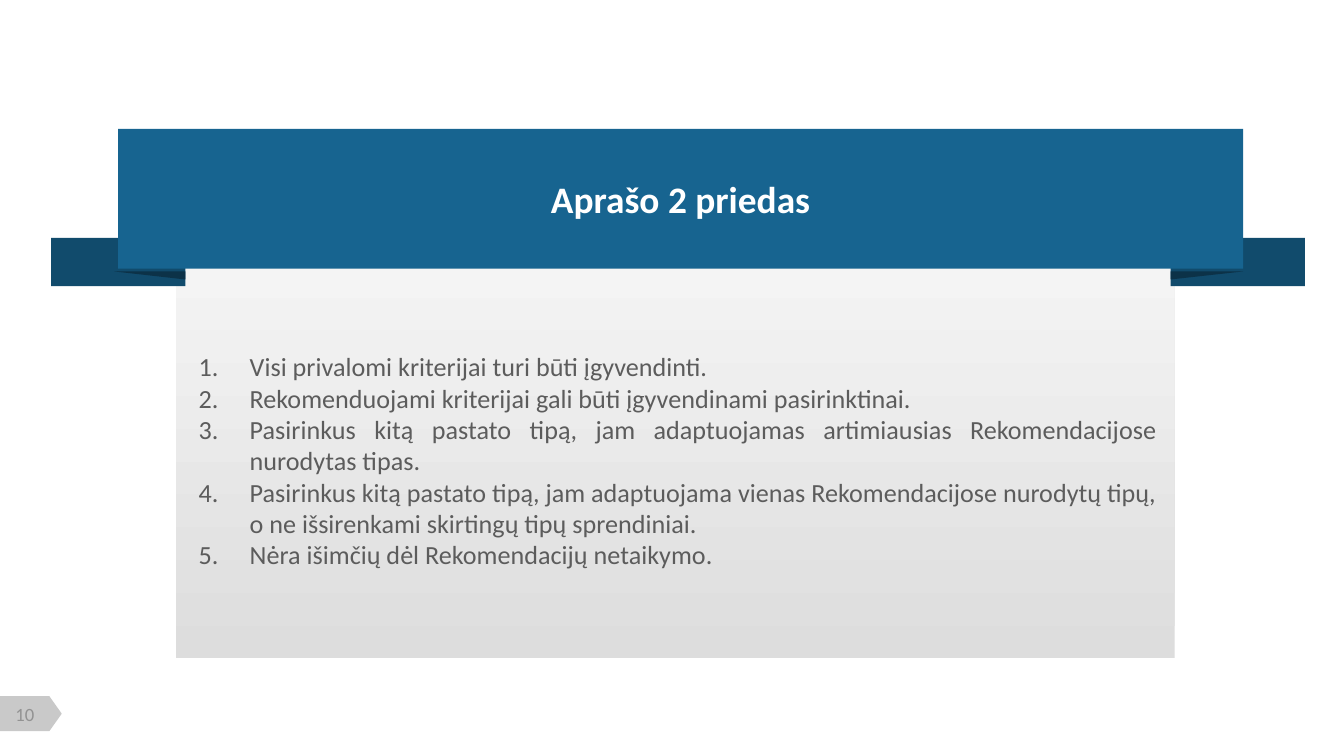
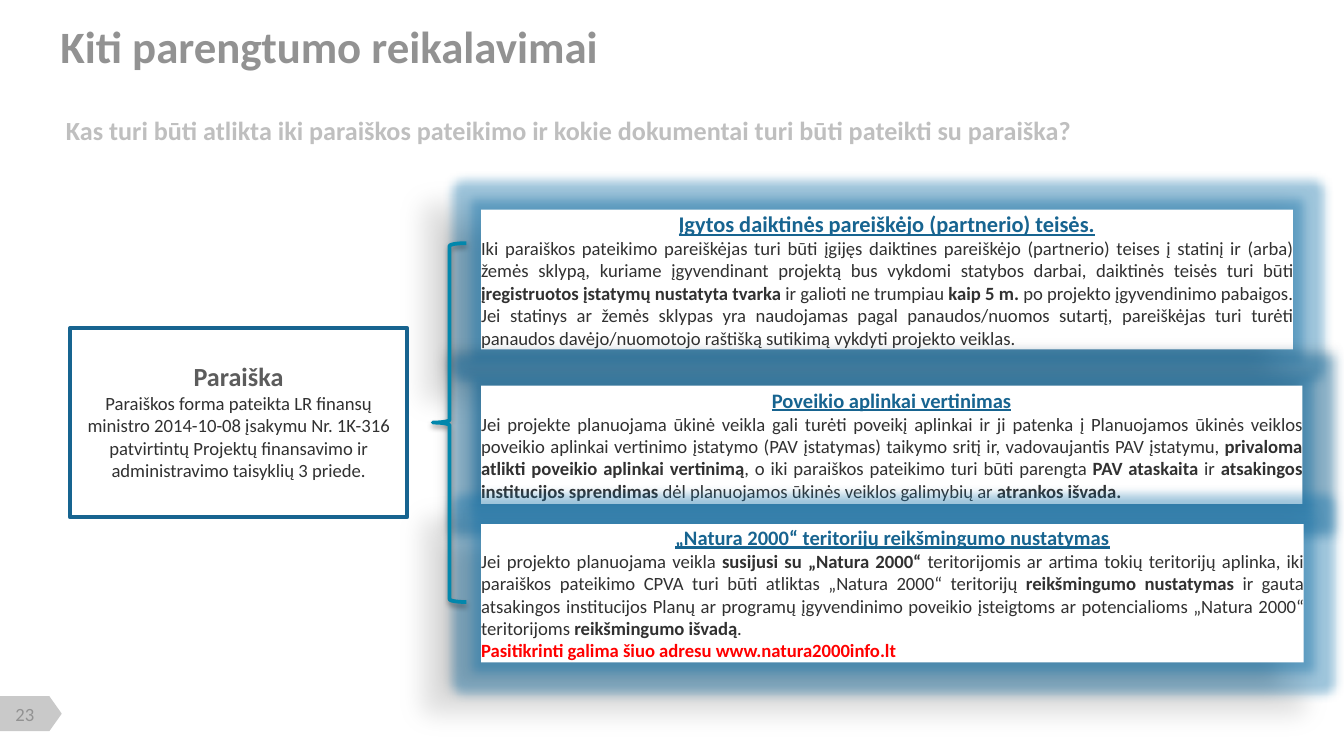
"""Builds two slides on application requirements."""
import dataclasses

import lxml.etree
import pptx
import pptx.dml.color
import pptx.enum.shapes
import pptx.enum.text
import pptx.oxml.ns
import pptx.util

Inches = pptx.util.Inches
Pt = pptx.util.Pt
KIND = pptx.enum.shapes.MSO_SHAPE
ALIGN = pptx.enum.text.PP_ALIGN
ANCHOR = pptx.enum.text.MSO_ANCHOR
qn = pptx.oxml.ns.qn


@dataclasses.dataclass(frozen=True)
class Theme:
    font: str = "Calibri"
    white: str = "FFFFFF"
    blue: str = "176490"
    tail: str = "114B6C"
    fold: str = "0C3248"
    glow: str = "1070A8"
    brace: str = "0187AC"
    badge: str = "C9C9C9"
    panel_dark: str = "DDDDDD"
    panel_light: str = "F4F4F4"
    title: str = "929292"
    subtitle: str = "BFBFBF"
    body: str = "5C5C5C"
    detail: str = "313131"
    alert: str = "FF0000"
    title_size: int = 24
    band_size: int = 20
    body_size: int = 14
    lead_size: int = 12
    heading_size: int = 11
    detail_size: int = 10


class Deck:
    def __init__(self, theme):
        self.theme = theme
        self.presentation = pptx.Presentation()
        self.presentation.slide_width = Inches(10)
        self.presentation.slide_height = Inches(10) * 9 // 16
        self.slide = None

    def new_slide(self, number):
        layout = self.presentation.slide_layouts[6]
        self.slide = self.presentation.slides.add_slide(layout)
        badge = self.shape(KIND.FLOWCHART_OFFPAGE_CONNECTOR,
                           (0.1, 5.08, 0.26, 0.46), self.theme.badge)
        badge.rotation = 270
        frame = self.text((0.02, 5.23, 0.33, 0.17))
        self.paragraph(frame, number, self.theme.detail_size, self.theme.title,
                       ALIGN.CENTER)

    def rgb(self, colour):
        return pptx.dml.color.RGBColor.from_string(colour)

    def paint(self, shape, fill, line=None):
        shape.shadow.inherit = False
        if fill:
            shape.fill.solid()
            shape.fill.fore_color.rgb = self.rgb(fill)
        else:
            shape.fill.background()
        if line:
            shape.line.color.rgb = self.rgb(line)
            shape.line.width = Pt(2)
        else:
            shape.line.fill.background()
        return shape

    def shape(self, kind, box, fill, line=None):
        shape = self.slide.shapes.add_shape(kind, *map(Inches, box))
        return self.paint(shape, fill, line)

    def triangle(self, points, fill):
        start, *rest = [tuple(map(Inches, point)) for point in points]
        builder = self.slide.shapes.build_freeform(*start)
        builder.add_line_segments(rest, close=True)
        return self.paint(builder.convert_to_shape(), fill)

    def gradient(self, shape, start, end):
        shape.fill.gradient()
        shape.fill.gradient_angle = 90
        for stop, colour in zip(shape.fill.gradient_stops, (start, end)):
            stop.color.rgb = self.rgb(colour)

    def effect(self, shape, tag, colour, alpha, **attributes):
        effects = shape._element.spPr.find(qn("a:effectLst"))
        values = {key: str(value) for key, value in attributes.items()}
        node = lxml.etree.SubElement(effects, qn(tag), values)
        tint = lxml.etree.SubElement(node, qn("a:srgbClr"), val=colour)
        lxml.etree.SubElement(tint, qn("a:alpha"), val=str(alpha * 1000))

    def shadow(self, shape, alpha, blur, distance, angle):
        self.effect(shape, "a:outerShdw", "000000", alpha, blurRad=int(Pt(blur)),
                    dist=int(Pt(distance)), dir=angle * 60000)

    def glow(self, shape, radius):
        self.effect(shape, "a:glow", self.theme.glow, 40, rad=int(Pt(radius)))

    def frame(self, shape, insets=(0, 0, 0, 0), anchor=ANCHOR.MIDDLE):
        frame = shape.text_frame
        frame.word_wrap = True
        frame.vertical_anchor = anchor
        (frame.margin_left, frame.margin_top,
         frame.margin_right, frame.margin_bottom) = map(Inches, insets)
        return frame

    def text(self, box, insets=(0, 0, 0, 0), anchor=ANCHOR.MIDDLE):
        shape = self.slide.shapes.add_textbox(*map(Inches, box))
        return self.frame(shape, insets, anchor)

    def paragraph(self, frame, content, size, colour, align=ALIGN.LEFT,
                  bold=False, underline=False, numbered=False):
        first = frame.paragraphs[0]
        paragraph = frame.add_paragraph() if first.runs else first
        paragraph.alignment = align
        if numbered:
            properties = paragraph._p.get_or_add_pPr()
            indent = int(Inches(0.38))
            properties.set("marL", str(indent))
            properties.set("indent", str(-indent))
            lxml.etree.SubElement(properties, qn("a:buAutoNum"), type="arabicPeriod")
        font = paragraph.font
        font.name = self.theme.font
        font.size = Pt(size)
        font.color.rgb = self.rgb(colour)
        font.bold = bold
        font.underline = underline
        for index, part in enumerate(content.split("**")):
            if part:
                run = paragraph.add_run()
                run.text = part
                if index % 2:
                    run.font.bold = True

    def requirement(self, box, heading, heading_size, detail, shadow):
        card = self.shape(KIND.RECTANGLE, box, self.theme.white)
        self.glow(card, 11)
        self.shadow(card, *shadow)
        frame = self.frame(card)
        self.paragraph(frame, heading, heading_size, self.theme.blue, ALIGN.CENTER,
                       bold=True, underline=True)
        self.paragraph(frame, detail, self.theme.detail_size, self.theme.detail,
                       ALIGN.JUSTIFY)
        return frame


def build_annex(deck):
    theme = deck.theme
    deck.new_slide("10")
    panel = deck.shape(KIND.RECTANGLE, (1.31, 1.97, 7.43, 2.93), theme.panel_light)
    deck.gradient(panel, theme.panel_dark, theme.panel_light)
    rules = deck.text((1.38, 2.56, 7.33, 2.23), (0.1, 0.05, 0.1, 0.05), ANCHOR.TOP)
    for rule in (
        "Visi privalomi kriterijai turi būti įgyvendinti.",
        "Rekomenduojami kriterijai gali būti įgyvendinami pasirinktinai.",
        "Pasirinkus kitą pastato tipą, jam adaptuojamas artimiausias "
        "Rekomendacijose nurodytas tipas.",
        "Pasirinkus kitą pastato tipą, jam adaptuojama vienas Rekomendacijose "
        "nurodytų tipų, o ne išsirenkami skirtingų tipų sprendiniai.",
        "Nėra išimčių dėl Rekomendacijų netaikymo.",
    ):
        deck.paragraph(rules, rule, theme.body_size, theme.body, ALIGN.JUSTIFY,
                       numbered=True)
    for left in (0.38, 8.71):
        deck.shape(KIND.RECTANGLE, (left, 1.77, 1, 0.36), theme.tail)
    band = deck.shape(KIND.RECTANGLE, (0.88, 0.96, 8.37, 1.04), theme.blue)
    deck.paragraph(deck.frame(band, (0.1, 0.05, 0.1, 0.05)), "Aprašo 2 priedas",
                   theme.band_size, theme.white, ALIGN.CENTER, bold=True)
    for outer, inner in ((0.85, 1.38), (9.25, 8.71)):
        deck.triangle(((outer, 2.02), (inner, 2.02), (inner, 2.08)), theme.fold)


def build_readiness(deck):
    theme = deck.theme
    deck.new_slide("23")
    subtitle = deck.text((0.49, 0.84, 9.15, 0.26))
    deck.paragraph(subtitle, "Kas turi būti atlikta iki paraiškos pateikimo ir kokie "
                   "dokumentai turi būti pateikti su paraiška?",
                   theme.body_size, theme.subtitle, bold=True)

    application = deck.shape(KIND.RECTANGLE, (0.52, 2.44, 2.51, 1.41),
                             theme.white, theme.blue)
    form = deck.frame(application, (0, 0, 0, 0.03))
    deck.paragraph(form, "Paraiška", theme.body_size, theme.body, ALIGN.CENTER, bold=True)
    for line in (
        "Paraiškos forma pateikta LR finansų",
        "ministro 2014-10-08 įsakymu Nr. 1K-316 patvirtintų Projektų finansavimo "
        "ir administravimo taisyklių 3 priede.",
    ):
        deck.paragraph(form, line, theme.detail_size, theme.detail, ALIGN.CENTER)

    far_shadow = (28, 11.8, 19.7, 141)
    near_shadow = (40, 4, 3, 225)
    deck.requirement(
        (3.58, 1.56, 6.04, 1.04),
        "Įgytos daiktinės pareiškėjo (partnerio) teisės.", theme.lead_size,
        "Iki paraiškos pateikimo pareiškėjas turi būti įgijęs daiktines pareiškėjo "
        "(partnerio) teises į statinį ir (arba) žemės sklypą, kuriame įgyvendinant "
        "projektą bus vykdomi statybos darbai, daiktinės teisės turi būti "
        "**įregistruotos įstatymų nustatyta tvarka **ir galioti ne trumpiau "
        "**kaip 5 m.** po projekto įgyvendinimo pabaigos. Jei statinys ar žemės "
        "sklypas yra naudojamas pagal panaudos/nuomos sutartį, pareiškėjas turi "
        "turėti panaudos davėjo/nuomotojo raštišką sutikimą vykdyti projekto veiklas.",
        far_shadow)
    deck.requirement(
        (3.58, 2.87, 6.11, 0.88),
        "Poveikio aplinkai vertinimas", theme.heading_size,
        "Jei projekte planuojama ūkinė veikla gali turėti poveikį aplinkai ir ji "
        "patenka į Planuojamos ūkinės veiklos poveikio aplinkai vertinimo įstatymo "
        "(PAV įstatymas) taikymo sritį ir, vadovaujantis PAV įstatymu, **privaloma "
        "atlikti poveikio aplinkai vertinimą**, o iki paraiškos pateikimo turi būti "
        "parengta **PAV ataskaita **ir **atsakingos institucijos sprendimas **dėl "
        "planuojamos ūkinės veiklos galimybių ar **atrankos išvada.**",
        near_shadow)
    natura = deck.requirement(
        (3.58, 3.9, 6.12, 1.03),
        "„Natura 2000“ teritorijų reikšmingumo nustatymas", theme.heading_size,
        "Jei projekto planuojama veikla **susijusi su „Natura 2000“ **teritorijomis "
        "ar artima tokių teritorijų aplinka, iki paraiškos pateikimo CPVA turi būti "
        "atliktas „Natura 2000“ teritorijų **reikšmingumo nustatymas **ir gauta "
        "atsakingos institucijos Planų ar programų įgyvendinimo poveikio įsteigtoms "
        "ar potencialioms „Natura 2000“ teritorijoms **reikšmingumo išvadą**.",
        far_shadow)
    deck.paragraph(natura, "Pasitikrinti galima šiuo adresu www.natura2000info.lt",
                   theme.detail_size, theme.alert, ALIGN.JUSTIFY, bold=True)

    brace = deck.shape(KIND.LEFT_BRACE, (3.22, 1.81, 0.25, 2.67), None, theme.brace)
    deck.shadow(brace, 38, 3.1, 1.6, 90)
    title = deck.text((0.45, 0.14, 9.28, 0.39), (0, 0.05, 0.1, 0.05))
    deck.paragraph(title, "Kiti parengtumo reikalavimai", theme.title_size,
                   theme.title, bold=True)


def main():
    deck = Deck(Theme())
    build_annex(deck)
    build_readiness(deck)
    deck.presentation.save("out.pptx")


if __name__ == "__main__":
    main()
